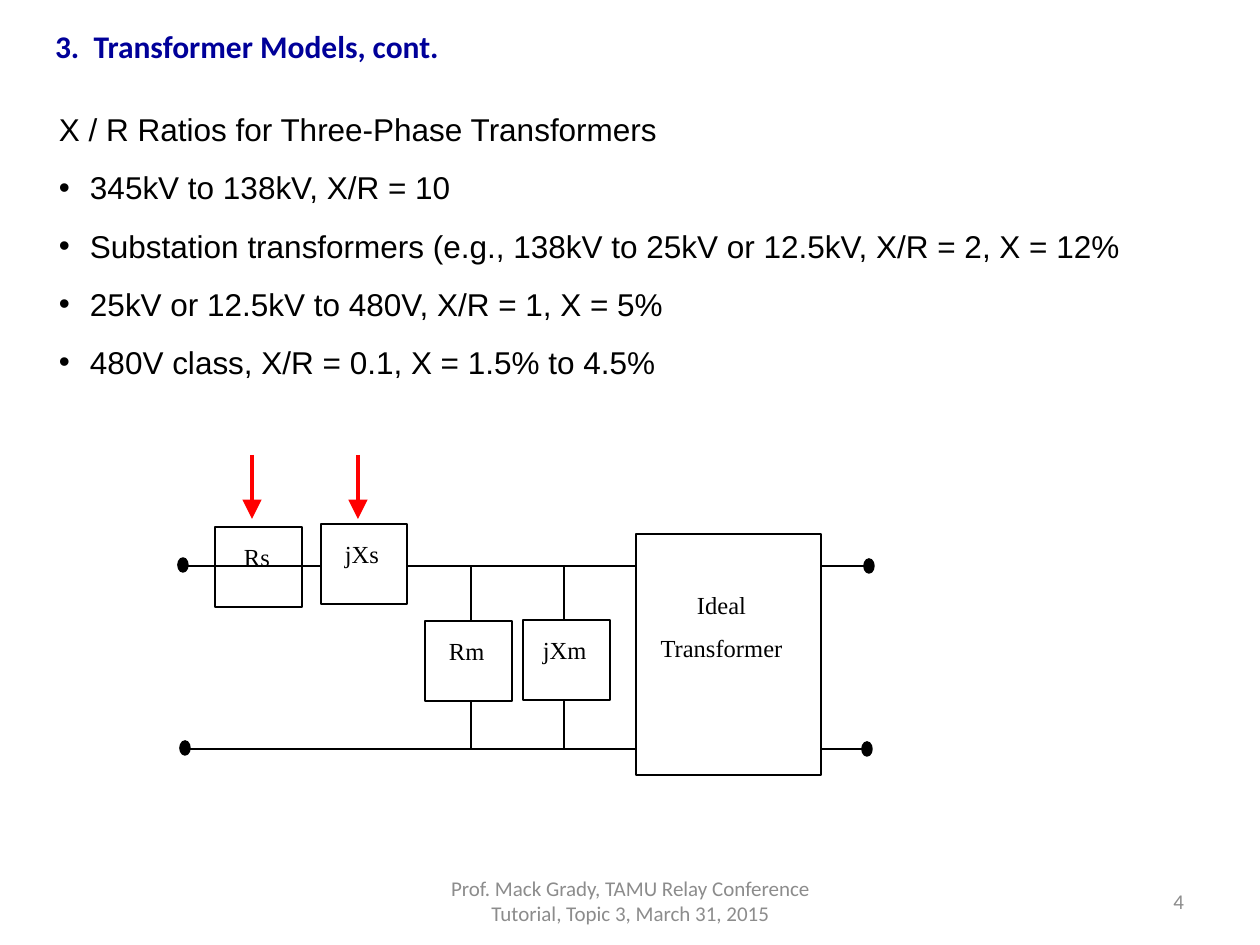
from lxml.etree import SubElement
from pptx import Presentation
from pptx.dml.color import RGBColor
from pptx.enum.shapes import MSO_CONNECTOR, MSO_SHAPE
from pptx.enum.text import MSO_ANCHOR as ANCHOR, PP_ALIGN as ALIGN
from pptx.oxml.ns import qn
from pptx.util import Inches, Pt

PX = Inches(1) / 126
COLORS = {"title": "000099", "ink": "000000", "footer": "8C8C8C",
          "arrow": "FF0000", "paper": "FFFFFF"}

# Content, lengths in pixels
TITLE = "3.  Transformer Models, cont."
HEADING = "X / R Ratios for Three-Phase Transformers"
RATIOS = [
    "345kV to 138kV, X/R = 10",
    "Substation transformers (e.g., 138kV to 25kV or 12.5kV, X/R = 2, X = 12%",
    "25kV or 12.5kV to 480V, X/R = 1, X = 5%",
    "480V class, X/R = 0.1, X = 1.5% to 4.5%",
]
FOOTER = "Prof. Mack Grady, TAMU Relay Conference Tutorial, Topic 3, March 31, 2015"
PAGE = "4"

TOP_WIRE, BOTTOM_WIRE = 566, 749
WIRES = [
    (181, TOP_WIRE, 869, TOP_WIRE),
    (181, BOTTOM_WIRE, 868, BOTTOM_WIRE),
    (471, TOP_WIRE, 471, BOTTOM_WIRE),
    (564, TOP_WIRE, 564, BOTTOM_WIRE),
]
# label lines, box, left/top/right inset, alignment, filled
BLOCKS = [
    (["Rs"], (215, 527, 87, 80), (29, 15, 0), ALIGN.LEFT, False),
    (["jXs"], (321, 524, 86, 80), (24, 15, 0), ALIGN.LEFT, True),
    (["Ideal", "Transformer"], (636, 534, 185, 241), (0, 56, 14), ALIGN.CENTER, True),
    (["Rm"], (425, 621, 87, 80), (24, 15, 0), ALIGN.LEFT, True),
    (["jXm"], (523, 620, 87, 80), (20, 15, 0), ALIGN.LEFT, True),
]
TERMINALS = [(183, 565), (869, 566), (185, 748), (867, 749)]
ARROWS_X = [252, 358]


def px(*values):
    return [round(v * PX) for v in values]


def rgb(name):
    return RGBColor.from_string(COLORS[name])


def write(s, lines, size=14, font="Times New Roman", color="ink", bold=False,
          align=ALIGN.LEFT, anchor=ANCHOR.TOP, insets=(0, 0, 0, 0), after=0):
    tf = s.text_frame
    tf.word_wrap = True
    tf.vertical_anchor = anchor
    tf.margin_left, tf.margin_top, tf.margin_right, tf.margin_bottom = px(*insets)
    for i, line in enumerate(lines):
        p = tf.add_paragraph() if i else tf.paragraphs[0]
        p.alignment = align
        p.space_before, p.space_after = Pt(0), Pt(after)
        r = p.add_run()
        r.text = line
        r.font.size, r.font.name, r.font.bold = Pt(size), font, bold
        r.font.color.rgb = rgb(color)
    return tf


def add_line(ends, color="ink", width=0.88, arrow=False):
    s = slide.shapes.add_connector(MSO_CONNECTOR.STRAIGHT, *px(*ends))
    s.line.color.rgb, s.line.width = rgb(color), Pt(width)
    if arrow:
        SubElement(s.line._get_or_add_ln(), qn("a:tailEnd"),
                   type="triangle", w="lg", len="lg")
    SubElement(s._element.spPr, qn("a:effectLst"))


def add_outlined(kind, box, fill=None):
    s = slide.shapes.add_shape(kind, *px(*box))
    s.shadow.inherit = False
    if fill:
        s.fill.solid()
        s.fill.fore_color.rgb = rgb(fill)
    else:
        s.fill.background()
    s.line.color.rgb, s.line.width = rgb("ink"), Pt(0.88)
    return s


prs = Presentation()
prs.slide_width, prs.slide_height = Inches(10), Inches(7.5)
slide = prs.slides.add_slide(prs.slide_layouts[5])

# Title
title = slide.shapes.title
title.left, title.top, title.width, title.height = px(42, 21, 703, 50)
write(title, [TITLE], size=18, font="Calibri", color="title", bold=True,
      insets=(13, 6, 13, 6))

# Ratio list
body = slide.shapes.add_textbox(*px(59, 110, 1100, 280))
tf = write(body, [HEADING] + RATIOS, size=18, font="Arial", after=11.7)
for p in tf.paragraphs[1:]:
    pPr = p._p.get_or_add_pPr()
    indent = px(31)[0]
    pPr.set("marL", str(indent))
    pPr.set("indent", str(-indent))
    SubElement(pPr, qn("a:buFont"), typeface="Arial")
    SubElement(pPr, qn("a:buChar"), char="•")

# Circuit
for wire in WIRES:
    add_line(wire)
for lines, box, (left, top, right), align, filled in BLOCKS:
    s = add_outlined(MSO_SHAPE.RECTANGLE, box, "paper" if filled else None)
    write(s, lines, align=align, insets=(left, top, right, 0), after=7.6)
for x, y in TERMINALS:
    add_outlined(MSO_SHAPE.OVAL, (x - 5, y - 7, 10, 14), "ink")

# Arrows to the series elements
for x in ARROWS_X:
    add_line((x, 455, x, 519), color="arrow", width=2.2, arrow=True)

# Footer and page number
for text, box, align in [(FOOTER, (431, 876, 399, 50), ALIGN.CENTER),
                         (PAGE, (903, 876, 294, 50), ALIGN.RIGHT)]:
    write(slide.shapes.add_textbox(*px(*box)), [text], size=12, font="Calibri",
          color="footer", align=align, anchor=ANCHOR.MIDDLE, insets=(13, 6, 13, 6))

prs.save("out.pptx")
